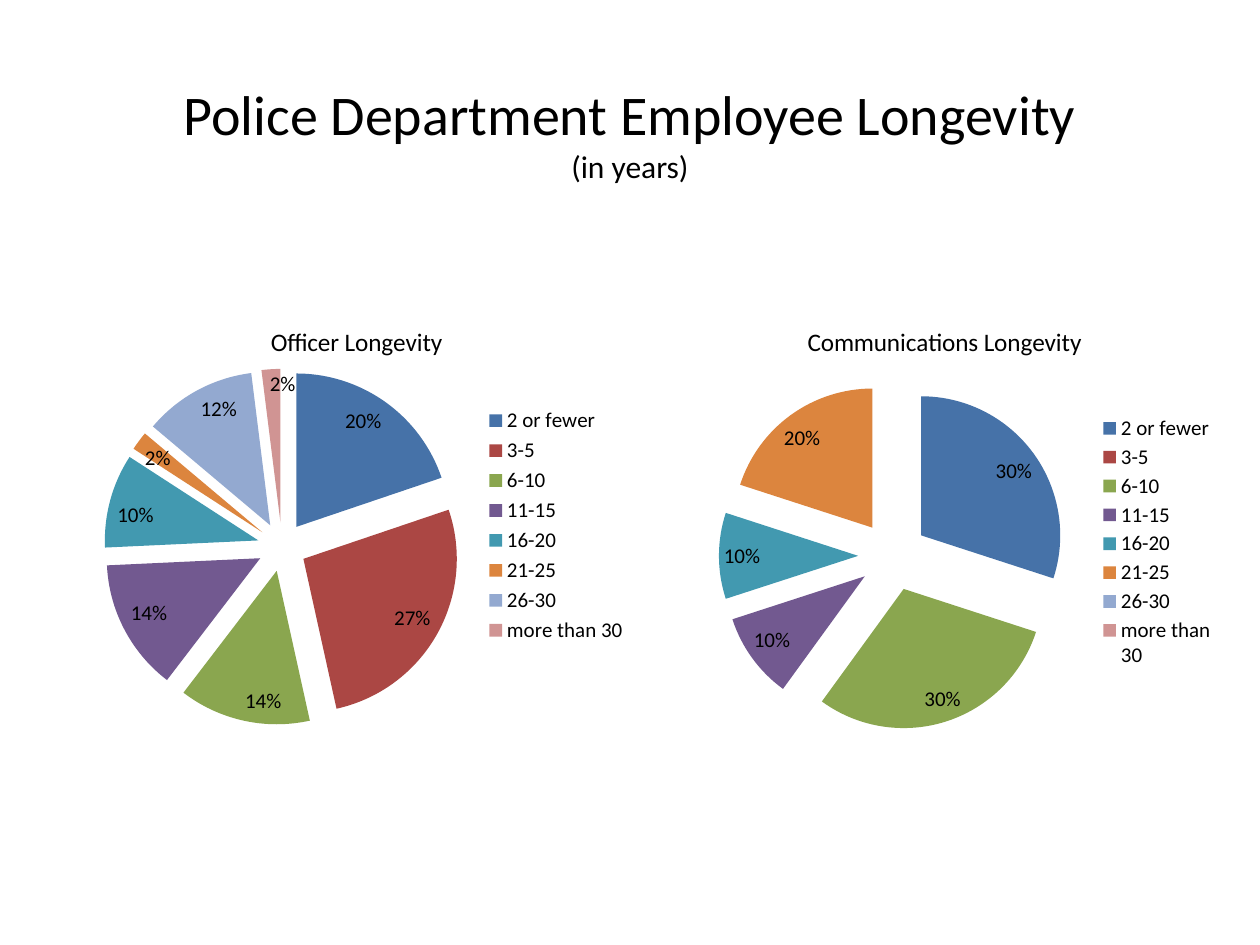
from dataclasses import dataclass

from lxml.etree import SubElement
from pptx import Presentation
from pptx.chart.data import CategoryChartData
from pptx.dml.color import RGBColor
from pptx.enum.chart import XL_CHART_TYPE as ChartType
from pptx.enum.chart import XL_LABEL_POSITION as LabelPosition
from pptx.enum.chart import XL_LEGEND_POSITION as LegendPosition
from pptx.enum.text import MSO_ANCHOR as Anchor
from pptx.enum.text import MSO_AUTO_SIZE as AutoSize
from pptx.enum.text import PP_ALIGN as Align
from pptx.oxml.ns import qn
from pptx.util import Emu, Pt

PX_PER_INCH = 126
TITLE_ONLY_LAYOUT = 5


@dataclass(frozen=True)
class Theme:
    font: str = "Calibri"
    text: str = "000000"
    title_size: float = 32
    subtitle_size: float = 18
    chart_title_size: float = 14.4
    chart_size: float = 12
    slices: tuple = ("4672A8", "AB4744", "8AA64F", "725990",
                     "4299B0", "DC853E", "93A9D0", "D09493")


THEME = Theme()
YEARS = ("2 or fewer", "3-5", "6-10", "11-15",
         "16-20", "21-25", "26-30", "more than 30")


def px(length):
    return Emu(round(length * 914400 / PX_PER_INCH))


def format_font(font, size):
    font.name = THEME.font
    font.size = Pt(size)
    font.bold = False
    font.color.rgb = RGBColor.from_string(THEME.text)


def write_text(paragraph, text, size=THEME.chart_size, align=Align.CENTER):
    paragraph.alignment = align
    run = paragraph.add_run()
    run.text = text
    format_font(run.font, size)


def add_heading(slide, box):
    """Title placeholder with the unit on a second line."""
    title = slide.shapes.title
    title.left, title.top, title.width, title.height = map(px, box)
    frame = title.text_frame
    frame.word_wrap = True
    frame.auto_size = AutoSize.NONE
    frame.vertical_anchor = Anchor.TOP
    write_text(frame.paragraphs[0], "Police Department Employee Longevity",
               size=THEME.title_size)
    write_text(frame.add_paragraph(), "(in years)", size=THEME.subtitle_size)


def set_layout(parent, position, settings):
    """Give a chart part a manual layout, as child number `position`."""
    layout = parent.find(qn("c:layout"))
    if layout is not None:
        parent.remove(layout)
    layout = SubElement(parent, qn("c:layout"))
    parent.insert(position, layout)
    manual = SubElement(layout, qn("c:manualLayout"))
    for name, value in settings:
        SubElement(manual, qn(f"c:{name}")).set("val", str(value))


def edge_settings(part, chart_box):
    """Turn a px box inside the chart into fractions of the chart."""
    width, height = chart_box[2:]
    fractions = [length / side for length, side in zip(part, (width, height) * 2)]
    return [("xMode", "edge"), ("yMode", "edge"), *zip("xywh", fractions)]


def explode_slices(series, percent):
    explosion = SubElement(series._element, qn("c:explosion"))
    explosion.set("val", str(percent))
    series._element.find(qn("c:tx")).addnext(explosion)


def add_percentages(series, position):
    labels = series.data_labels
    labels.show_percentage = True
    labels.show_value = False
    labels.number_format = "0%"
    labels.number_format_is_linked = False
    labels.position = position
    format_font(labels.font, THEME.chart_size)


def point_label(series, index, position):
    """Label element of one slice."""
    series.points[index].data_label.position = position
    labels = series.data_labels._element.findall(qn("c:dLbl"))
    return next(label for label in labels
                if label.find(qn("c:idx")).get("val") == str(index))


def hide_label(series, index):
    label = point_label(series, index, LabelPosition.BEST_FIT)
    for child in list(label)[1:]:
        label.remove(child)
    SubElement(label, qn("c:delete")).set("val", "1")


def shift_label(series, index, x, y):
    """Move one slice's percentage by fractions of the chart."""
    label = point_label(series, index, LabelPosition.INSIDE_END)
    label.find(qn("c:showVal")).set("val", "0")
    label.find(qn("c:showPercent")).set("val", "1")
    set_layout(label, 1, [("x", x), ("y", y)])


def add_longevity_pie(slide, box, title, values, explosion, plot,
                      label_position, legend=None):
    """Exploded pie with its title, percentages and legend."""
    data = CategoryChartData()
    data.categories = YEARS
    data.add_series("Series 1", values)
    chart = slide.shapes.add_chart(ChartType.PIE, *map(px, box), data).chart
    format_font(chart.font, THEME.chart_size)

    # Title and legend
    chart.has_title = True
    write_text(chart.chart_title.text_frame.paragraphs[0], title,
               size=THEME.chart_title_size)
    chart.chart_title.include_in_layout = False
    chart.has_legend = True
    chart.legend.position = LegendPosition.RIGHT
    chart.legend.include_in_layout = False
    format_font(chart.legend.font, THEME.chart_size)
    if legend:
        set_layout(chart.legend._element, 1, edge_settings(legend, box))

    # Slices
    pie = chart.plots[0]
    pie.vary_by_categories = True
    series = pie.series[0]
    explode_slices(series, explosion)
    for index, color in enumerate(THEME.slices):
        fill = series.points[index].format.fill
        fill.solid()
        fill.fore_color.rgb = RGBColor.from_string(color)
    set_layout(pie._element.getparent(), 0,
               [("layoutTarget", "inner"), *edge_settings(plot, box)])

    # Percentages, none for empty slices
    add_percentages(series, label_position)
    for index, value in enumerate(values):
        if value == 0:
            hide_label(series, index)
    return series


def main():
    presentation = Presentation()
    presentation.slide_width = px(1260)
    presentation.slide_height = px(945)
    layout = presentation.slide_layouts[TITLE_ONLY_LAYOUT]
    slide = presentation.slides.add_slide(layout)

    officers = add_longevity_pie(
        slide, (73, 305, 567, 441), "Officer Longevity",
        (20, 27, 14, 14, 10, 2, 12, 2), explosion=16,
        plot=(31, 64, 356, 356), label_position=LabelPosition.INSIDE_END)
    shift_label(officers, len(YEARS) - 1, x=0.02, y=-0.01)
    add_longevity_pie(
        slide, (661, 305, 567, 441), "Communications Longevity",
        (30, 0, 30, 10, 10, 20, 0, 0), explosion=25,
        plot=(58, 77, 348, 348), label_position=LabelPosition.BEST_FIT,
        legend=(434, 107, 124, 260))
    add_heading(slide, (157, 73, 946, 118))

    presentation.save("out.pptx")


if __name__ == "__main__":
    main()
